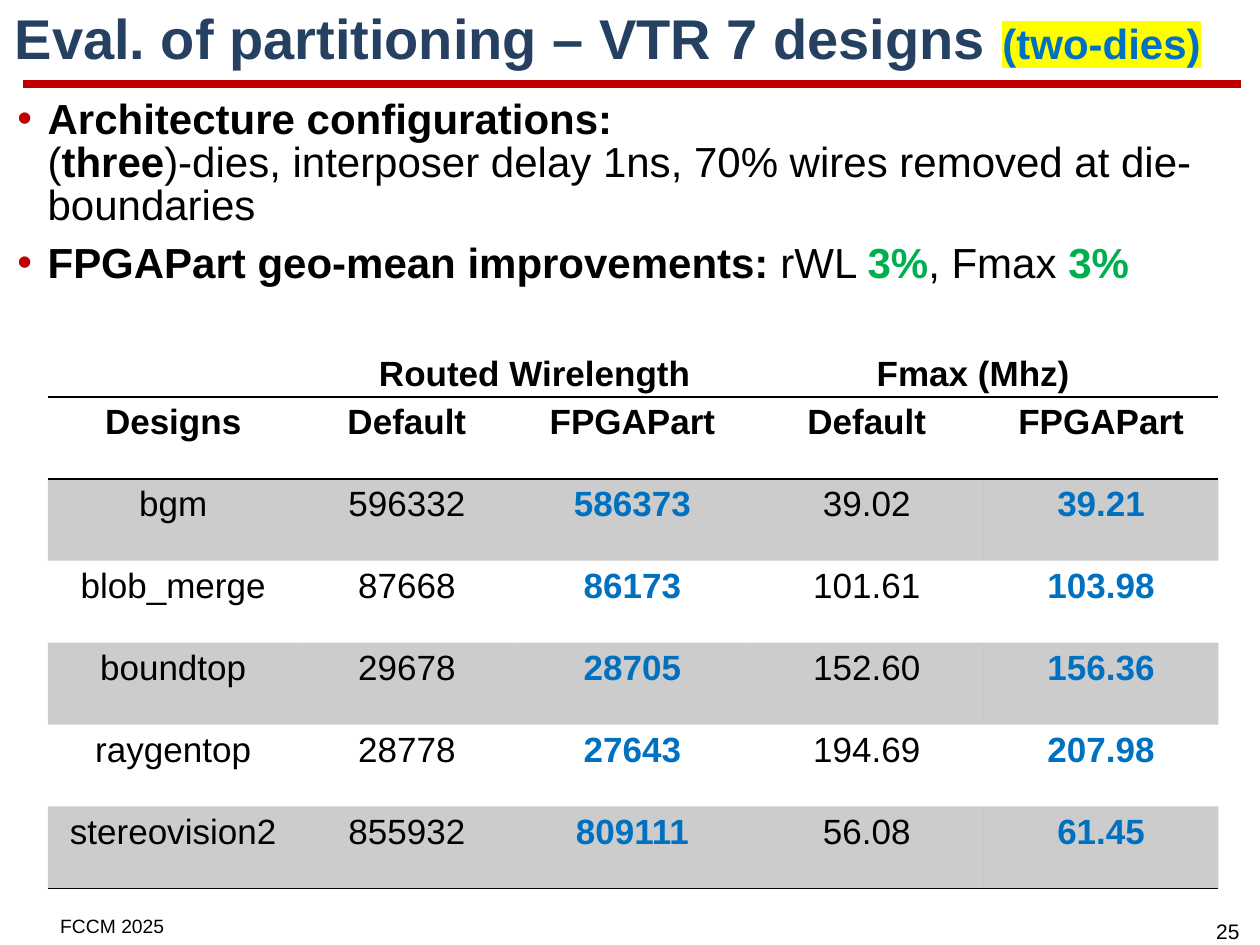
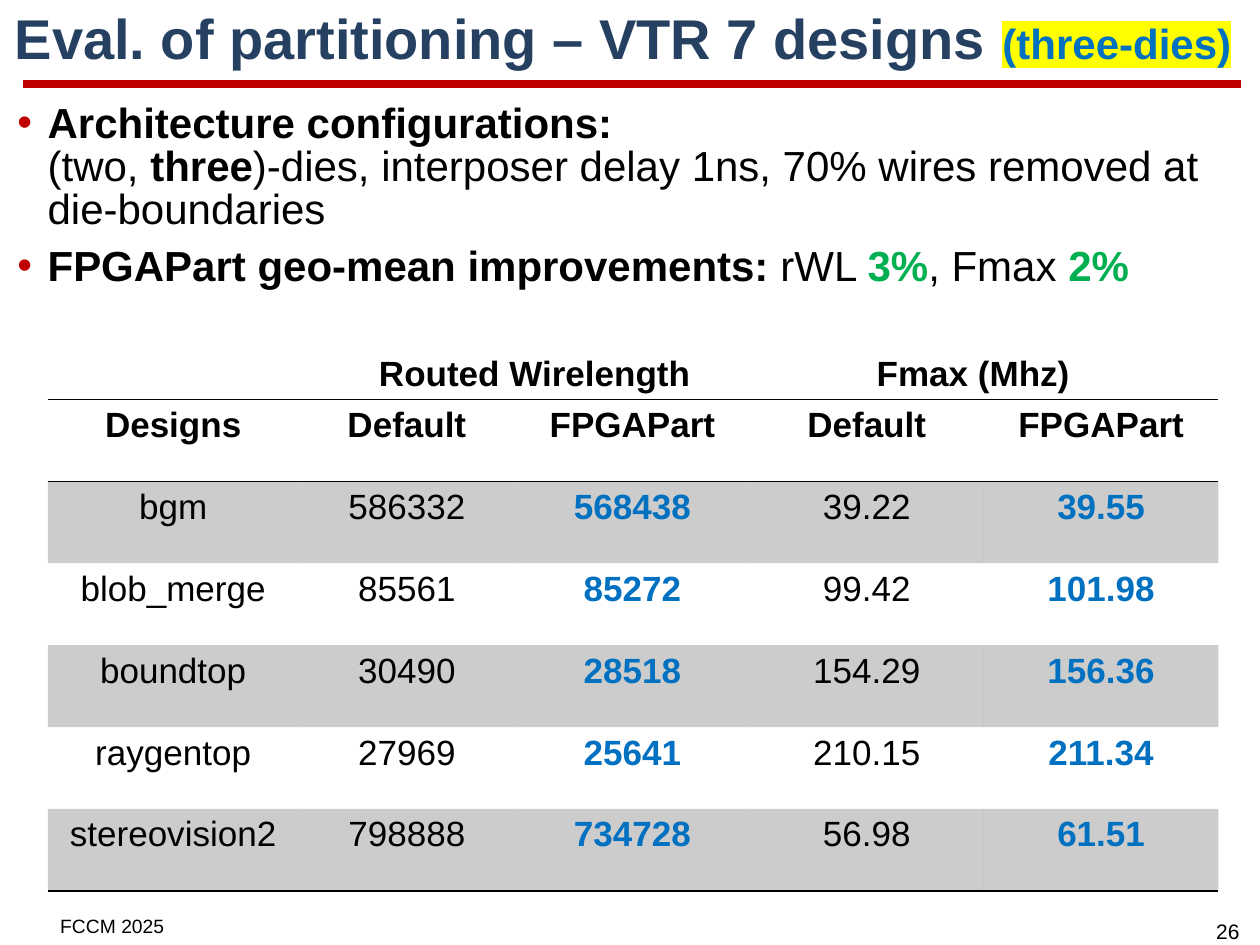
from lxml.etree import SubElement as Sub, fromstring
from pptx import Presentation
from pptx.dml.color import RGBColor
from pptx.enum.shapes import MSO_CONNECTOR as Link
from pptx.enum.text import MSO_ANCHOR as Anchor, PP_ALIGN as Align
from pptx.oxml.ns import nsdecls, qn
from pptx.util import Inches, Pt

rgb = RGBColor.from_string
BLACK, RED, NAVY = "000000", "C00000", "254061"
BLUE, GREEN, YELLOW = "0070C0", "00B050", "FFFF00"
PLAIN = "{2D5ABB26-0587-4C30-8999-92F81FD0307C}"  # table style without grid
WIDTHS = [1.99, 1.72, 1.86, 1.86, 1.86]
ROW = 0.65
HEAD = ["Designs", "Default", "FPGAPart", "Default", "FPGAPart"]
NAMES = ["bgm", "blob_merge", "boundtop", "raygentop", "stereovision2"]

SLIDES = [
    dict(dies="(two-dies)", lead="(", gain="3%", body=0.75, grid=3.15, rows=[
        ["596332", "586373", "39.02", "39.21"],
        ["87668", "86173", "101.61", "103.98"],
        ["29678", "28705", "152.60", "156.36"],
        ["28778", "27643", "194.69", "207.98"],
        ["855932", "809111", "56.08", "61.45"]]),
    dict(dies="(three-dies)", lead="(two, ", gain="2%", body=0.78, grid=3.17, rows=[
        ["586332", "568438", "39.22", "39.55"],
        ["85561", "85272", "99.42", "101.98"],
        ["30490", "28518", "154.29", "156.36"],
        ["27969", "25641", "210.15", "211.34"],
        ["798888", "734728", "56.98", "61.51"]]),
]


def box(slide, *place):
    """Add a wrapping text box and return its text frame."""
    frame = slide.shapes.add_textbox(*map(Inches, place)).text_frame
    frame.word_wrap = True
    return frame


def write(para, size, *runs):
    """Fill a paragraph with runs of (text, bold, colour)."""
    para.font.name = "Arial"
    para.font.size = Pt(size)
    for text, bold, color in runs:
        if text == "\n":
            para.add_line_break()
            continue
        run = para.add_run()
        run.text = text
        font = para.font if len(runs) == 1 else run.font
        font.bold = bold
        font.color.rgb = rgb(color)


prs = Presentation()
prs.slide_width, prs.slide_height = Inches(10), Inches(7.5)

for page, data in enumerate(SLIDES, 25):
    slide = prs.slides.add_slide(prs.slide_layouts[6])

    # Red rule, page number and footer
    line = slide.shapes.add_connector(
        Link.STRAIGHT, Inches(0.18), Inches(0.67), Inches(9.85), Inches(0.67))
    line.line.color.rgb = rgb(RED)
    line.line.width = Pt(4.5)
    Sub(line._element.spPr, qn("a:effectLst"))
    para = box(slide, 9.5, 7.24, 0.49, 0.3).paragraphs[0]
    para.alignment = Align.CENTER
    write(para, 12, (str(page), False, BLACK))
    write(box(slide, 0.38, 7.21, 1.87, 0.27).paragraphs[0], 11,
          ("FCCM 2025", False, BLACK))

    # Title with highlighted die count
    frame = box(slide, 0.02, 0.08, 9.93, 0.49)
    frame.vertical_anchor = Anchor.MIDDLE
    para = frame.paragraphs[0]
    para.line_spacing = 0.9
    write(para, 32, ("Eval. of partitioning – VTR 7 designs ", True, NAVY),
          (data["dies"], True, BLUE))
    dies = para.runs[1]
    dies.font.size = Pt(24)
    mark = Sub(dies._r.rPr, qn("a:highlight"))
    Sub(mark, qn("a:srgbClr"), val=YELLOW)

    # Bullets
    frame = box(slide, 0.02, data["body"], 9.83, 2)
    points = [
        [("Architecture configurations:", True, BLACK), ("\n", None, None),
         (data["lead"], False, BLACK), ("three", True, BLACK),
         (")-dies, interposer delay 1ns, 70% wires removed at die-boundaries",
          False, BLACK)],
        [("FPGAPart geo-mean improvements: ", True, BLACK),
         ("rWL ", False, BLACK), ("3%", True, GREEN),
         (", Fmax ", False, BLACK), (data["gain"], True, GREEN)],
    ]
    for i, runs in enumerate(points):
        para = frame.add_paragraph() if i else frame.paragraphs[0]
        para.line_spacing = 0.85
        para.space_before = Pt(8.4 if i else 0)
        props = para._p.get_or_add_pPr()
        props.set("marL", str(Inches(0.26)))
        props.set("indent", str(Inches(-0.24)))
        Sub(Sub(props, qn("a:buClr")), qn("a:srgbClr"), val=RED)
        Sub(props, qn("a:buFont"), typeface="Arial")
        Sub(props, qn("a:buChar"), char="•")
        write(para, 24, *runs)

    # Results table
    cells = [HEAD] + [[name] + row for name, row in zip(NAMES, data["rows"])]
    grid = slide.shapes.add_table(
        len(cells), len(HEAD), Inches(0.38), Inches(data["grid"]),
        Inches(sum(WIDTHS)), Inches(ROW * len(cells))).table
    grid.first_row = grid.horz_banding = False
    grid._tbl.tblPr.find(qn("a:tableStyleId")).text = PLAIN
    for col, width in zip(grid.columns, WIDTHS):
        col.width = Inches(width)
    for r, row in enumerate(cells):
        grid.rows[r].height = Inches(ROW)
        for c, text in enumerate(row):
            cell = grid.cell(r, c)
            ours = r > 0 and c in (2, 4)
            para = cell.text_frame.paragraphs[0]
            para.alignment = Align.CENTER
            write(para, 20, (text, r == 0 or ours, BLUE if ours else BLACK))
            if r % 2:
                cell.fill.solid()
                cell.fill.fore_color.rgb = rgb(BLACK)
                tint = cell._tc.tcPr.find(".//" + qn("a:srgbClr"))
                Sub(tint, qn("a:alpha"), val="20000")
            else:
                cell.fill.background()
            sides = {0: "TB", len(cells) - 1: "B"}.get(r, "")
            for i, side in enumerate(sides):
                cell._tc.tcPr.insert(i, fromstring(
                    f'<a:ln{side} {nsdecls("a")} w="{Pt(1)}"><a:solidFill>'
                    f'<a:srgbClr val="{BLACK}"/></a:solidFill></a:ln{side}>'))

    # Headings above the column pairs
    for left, text in [(2.91, "Routed Wirelength"), (6.86, "Fmax (Mhz)")]:
        write(box(slide, left, 2.74, 3.1, 0.44).paragraphs[0], 20,
              (text, True, BLACK))

prs.save("out.pptx")
